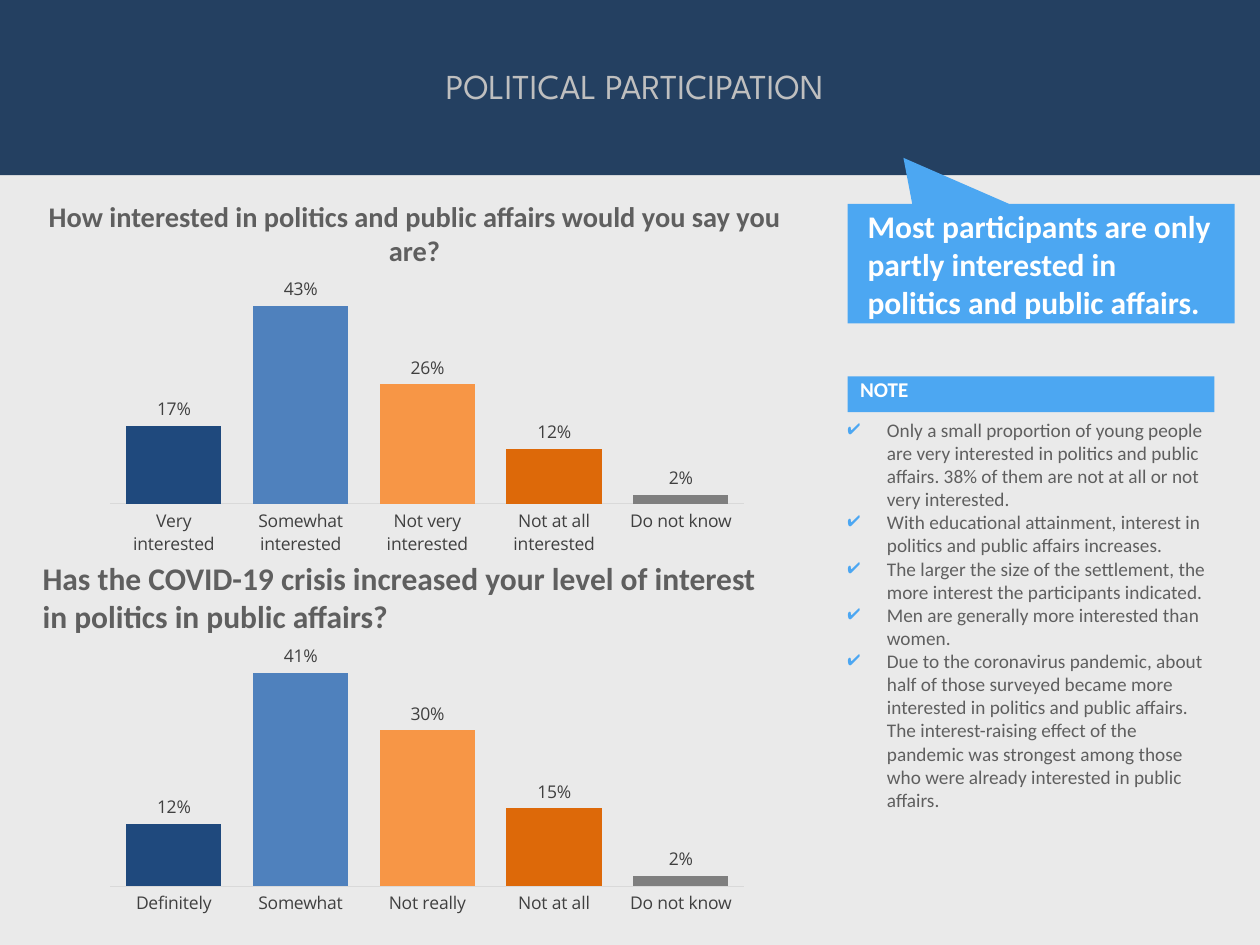
from lxml.etree import SubElement
from pptx import Presentation
from pptx.chart.data import CategoryChartData
from pptx.dml.color import RGBColor
from pptx.enum.chart import XL_CHART_TYPE as ChartType
from pptx.enum.chart import XL_LABEL_POSITION as LabelPosition
from pptx.enum.chart import XL_TICK_LABEL_POSITION as TickLabelPosition
from pptx.enum.chart import XL_TICK_MARK as TickMark
from pptx.enum.shapes import MSO_SHAPE as Shape
from pptx.enum.text import MSO_ANCHOR as Anchor
from pptx.enum.text import PP_ALIGN as Align
from pptx.oxml import parse_xml
from pptx.oxml.ns import nsdecls, qn
from pptx.util import Cm, Pt

NAVY, BLUE, GRAY, PALE = "244061", "4CA7F2", "5F5F5F", "EAEAEA"
BAR_COLORS = ["1F497D", "4F81BD", "F79646", "DD6909", "7F7F7F"]
PADDING = (0.25, 0.13, 0.25, 0.13)
NOTES = [
    "Only a small proportion of young people are very interested in politics and public affairs. "
    "38% of them are not at all or not very interested.",
    "With educational attainment, interest in politics and public affairs increases.",
    "The larger the size of the settlement, the more interest the participants indicated.",
    "Men are generally more interested than women.",
    "Due to the coronavirus pandemic, about half of those surveyed became more interested in "
    "politics and public affairs. The interest-raising effect of the pandemic was strongest "
    "among those who were already interested in public affairs.",
]


def color(value):
    return RGBColor.from_string(value)


def style_font(font, size, value, name="Calibri", bold=False):
    font.size = Pt(size)
    font.color.rgb = color(value)
    font.name = name
    font.bold = bold


def add_bullet(paragraph):
    properties = paragraph._p.get_or_add_pPr()
    properties.set("marL", str(Cm(0.79)))
    properties.set("indent", str(-Cm(0.79)))
    bullet_color = SubElement(properties, qn("a:buClr"))
    SubElement(bullet_color, qn("a:srgbClr"), val=BLUE)
    SubElement(properties, qn("a:buChar"), char="✔")


def write_text(shape, lines, size, value, name="Calibri", bold=False, align=Align.LEFT,
               anchor=Anchor.MIDDLE, padding=PADDING, bullets=False):
    frame = shape.text_frame
    frame.word_wrap = True
    frame.vertical_anchor = anchor
    (frame.margin_left, frame.margin_top,
     frame.margin_right, frame.margin_bottom) = map(Cm, padding)
    frame.text = "\n".join(lines)
    for paragraph in frame.paragraphs:
        paragraph.alignment = align
        if bullets:
            add_bullet(paragraph)
        style_font(paragraph.font, size, value, name, bold)


def add_text(slide, box, lines, size, value, **options):
    shape = slide.shapes.add_textbox(*map(Cm, box))
    write_text(shape, lines, size, value, **options)


def add_block(slide, kind, box, fill):
    shape = slide.shapes.add_shape(kind, *map(Cm, box))
    shape.shadow.inherit = False
    shape.fill.solid()
    shape.fill.fore_color.rgb = color(fill)
    shape.line.fill.background()
    return shape


def set_chart_area(chart, top, height):
    chart_xml = chart.element.find(qn("c:chart"))
    chart_xml.addnext(parse_xml(
        f'<c:spPr {nsdecls("c", "a")}><a:solidFill><a:srgbClr val="{PALE}"/></a:solidFill>'
        '<a:ln><a:noFill/></a:ln></c:spPr>'))
    plot_area = chart_xml.find(qn("c:plotArea"))
    for layout in plot_area.findall(qn("c:layout")):
        plot_area.remove(layout)
    layout = parse_xml(f'<c:layout {nsdecls("c")}><c:manualLayout/></c:layout>')
    settings = [("layoutTarget", "inner"), ("xMode", "edge"), ("yMode", "edge"),
                ("x", 0.02), ("y", top), ("w", 0.96), ("h", height)]
    for tag, value in settings:
        SubElement(layout[0], qn(f"c:{tag}"), val=str(value))
    plot_area.insert(0, layout)


def add_column_chart(slide, box, categories, values, plot_top, plot_height):
    data = CategoryChartData(number_format="0%")
    data.categories = categories
    data.add_series("Series 1", values)
    chart = slide.shapes.add_chart(ChartType.COLUMN_CLUSTERED, *map(Cm, box), data).chart
    chart.has_title = False
    chart.has_legend = False
    style_font(chart.font, 10, "000000", "Arial")
    set_chart_area(chart, plot_top, plot_height)

    category_axis, value_axis = chart.category_axis, chart.value_axis
    for axis in (category_axis, value_axis):
        axis.major_tick_mark = axis.minor_tick_mark = TickMark.NONE
        axis.has_major_gridlines = False
    style_font(category_axis.tick_labels.font, 10, "404040", "Open Sans")
    category_axis.format.line.color.rgb = color("D9D9D9")
    category_axis.format.line.width = Pt(0.75)
    value_axis.minimum_scale, value_axis.maximum_scale = 0, 0.45
    value_axis.tick_label_position = TickLabelPosition.NONE
    value_axis.format.line.fill.background()

    plot = chart.plots[0]
    plot.gap_width = 33
    plot.vary_by_categories = False
    plot.has_data_labels = True
    labels = plot.data_labels
    labels.show_value = True
    labels.position = LabelPosition.OUTSIDE_END
    labels.number_format, labels.number_format_is_linked = "0%", False
    style_font(labels.font, 10, "404040", "Open Sans")
    for index, bar_color in enumerate(BAR_COLORS):
        fill = plot.series[0].points[index].format.fill
        fill.solid()
        fill.fore_color.rgb = color(bar_color)


def main():
    presentation = Presentation()
    presentation.slide_width, presentation.slide_height = Cm(25.4), Cm(19.05)
    slide = presentation.slides.add_slide(presentation.slide_layouts[6])
    slide.background.fill.solid()
    slide.background.fill.fore_color.rgb = color(PALE)

    add_block(slide, Shape.RECTANGLE, (0, 0, 25.4, 3.53), NAVY)
    add_text(slide, (0.69, 1.12, 24.21, 1.19), ["POLITICAL PARTICIPATION"], 20, "BFBFBF",
             name="League Spartan", align=Align.CENTER)
    add_text(slide, (0.71, 4.11, 15.29, 1.19),
             ["How interested in politics and public affairs would you say you are?"],
             16.2, GRAY, bold=True, align=Align.CENTER)

    callout = add_block(slide, Shape.RECTANGULAR_CALLOUT, (17.09, 4.11, 7.8, 2.41), BLUE)
    callout.adjustments[0], callout.adjustments[1] = -0.356, -0.885
    write_text(callout,
               ["Most participants are only partly interested in politics and public affairs."],
               18, "FFFFFF", bold=True, padding=(0.4, 0.4, 0.4, 0.4))

    note_header = add_block(slide, Shape.RECTANGLE, (17.09, 7.59, 7.39, 0.72), BLUE)
    write_text(note_header, ["NOTE"], 12, "FFFFFF", bold=True, anchor=Anchor.TOP,
               padding=(0.25, 0, 0.25, 0))
    add_text(slide, (17.09, 8.33, 7.39, 10.08), NOTES, 11, GRAY, anchor=Anchor.TOP,
             padding=(0, 0.1, 0.1, 0.1), bullets=True)

    add_text(slide, (0.61, 11.13, 15.29, 1.8),
             ["Has the COVID-19 crisis increased your level of interest in politics in public affairs?"],
             18, GRAY, bold=True)
    add_column_chart(slide, (1.96, 5.59, 13.31, 5.64),
                     ["Very interested", "Somewhat interested", "Not very interested",
                      "Not at all interested", "Do not know"],
                     [0.17, 0.43, 0.26, 0.12, 0.02], 0.07, 0.74)
    add_column_chart(slide, (1.96, 12.98, 13.31, 5.56),
                     ["Definitely", "Somewhat", "Not really", "Not at all", "Do not know"],
                     [0.12, 0.41, 0.3, 0.15, 0.02], 0.03, 0.85)
    presentation.save("out.pptx")


if __name__ == "__main__":
    main()
